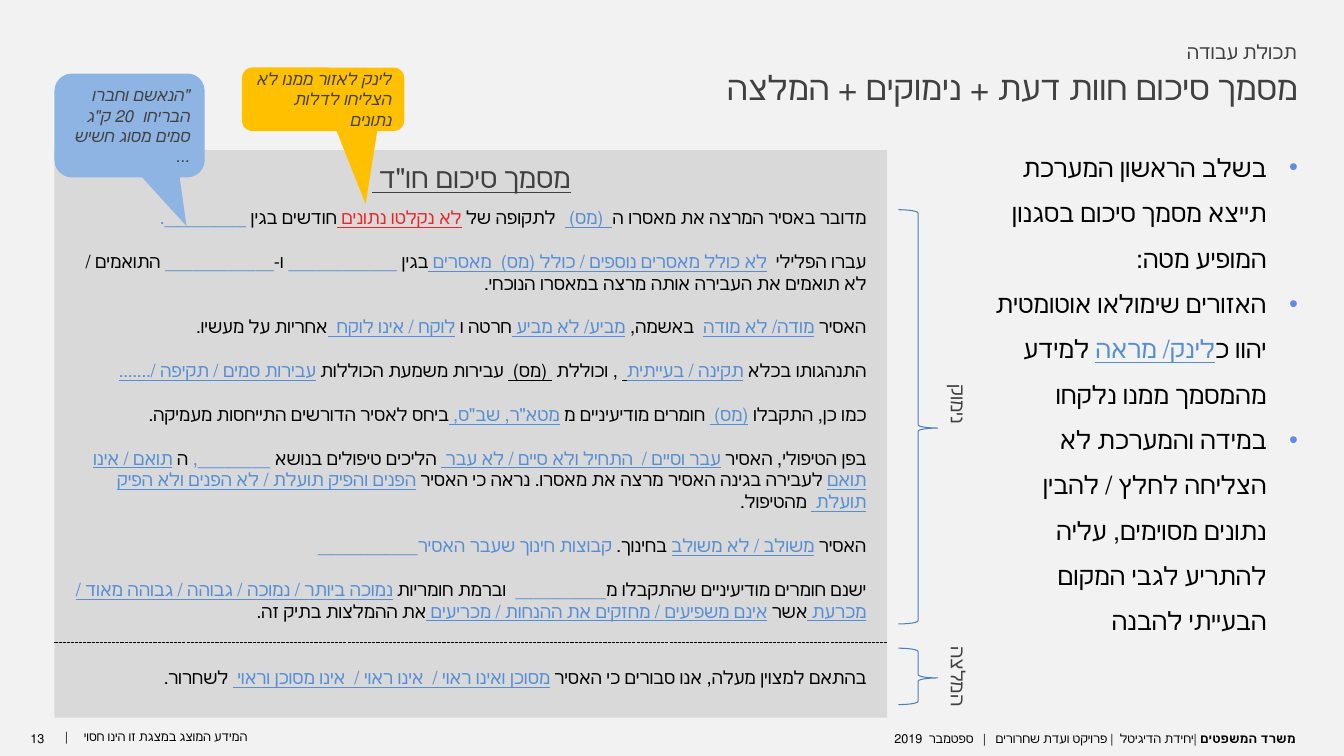
from dataclasses import dataclass
from typing import NamedTuple, Optional

import lxml.etree
import pptx
import pptx.dml.color
import pptx.enum.dml
import pptx.enum.shapes
import pptx.enum.text
import pptx.oxml.ns
import pptx.util

Inches = pptx.util.Inches
Pt = pptx.util.Pt
RGBColor = pptx.dml.color.RGBColor
Shape = pptx.enum.shapes.MSO_SHAPE
Align = pptx.enum.text.PP_ALIGN
qn = pptx.oxml.ns.qn

BACKGROUND = RGBColor(0xF2, 0xF2, 0xF2)
PANEL = RGBColor(0xD9, 0xD9, 0xD9)
BLACK = RGBColor(0, 0, 0)
GRAY = RGBColor(0x40, 0x40, 0x40)
BLUE = RGBColor(0x55, 0x8E, 0xD5)
RED = RGBColor(0xED, 0x24, 0x28)
BULLET = RGBColor(0x5D, 0x8B, 0xE6)
BRACE = RGBColor(0x4B, 0x7E, 0xBC)
PALE_BLUE = RGBColor(0x8E, 0xB4, 0xE3)
AMBER = RGBColor(0xFF, 0xC0, 0x00)


class Area(NamedTuple):
    left: float
    top: float
    width: float
    height: float


class Span(NamedTuple):
    text: str
    color: Optional[RGBColor] = None
    underline: bool = False
    bold: bool = False


@dataclass
class Style:
    font: str
    size: float
    color: RGBColor = GRAY
    align: Align = Align.RIGHT
    italic: bool = False
    bulleted: bool = False
    line_spacing: Optional[float] = None
    gap: float = 0


@dataclass
class Label:
    area: Area
    paragraphs: list[list[Span]]
    style: Style
    rotation: float = 0
    margins: tuple[float, float] = (0.1, 0.05)


@dataclass
class Callout:
    area: Area
    text: str
    fill: RGBColor
    tail: tuple[float, float]


def link(text: str) -> Span:
    return Span(text, BLUE, True)


def blank(text: str) -> Span:
    return Span(text, BLUE)


def inches(area: Area) -> list[int]:
    return [Inches(length) for length in area]


def add_bullet(para) -> None:
    properties = para._p.get_or_add_pPr()
    properties.set("marR", str(Inches(0.31)))
    properties.set("marL", str(Inches(0.31)))
    properties.set("indent", str(Inches(-0.31)))
    color = lxml.etree.SubElement(properties, qn("a:buClr"))
    lxml.etree.SubElement(color, qn("a:srgbClr"), val=str(BULLET))
    lxml.etree.SubElement(properties, qn("a:buFont"), typeface="Arial")
    lxml.etree.SubElement(properties, qn("a:buChar"), char="•")


def write(frame, paragraphs: list[list[Span]], style: Style) -> None:
    frame.word_wrap = True
    for index, spans in enumerate(paragraphs):
        para = frame.add_paragraph() if index else frame.paragraphs[0]
        para.alignment = style.align
        para._p.get_or_add_pPr().set("rtl", "1")
        if style.line_spacing:
            para.line_spacing = style.line_spacing
        if index and style.gap:
            para.space_before = Pt(style.gap)
        if style.bulleted:
            add_bullet(para)
        para.font.name = style.font
        para.font.size = Pt(style.size)
        para.font.italic = style.italic
        para.font.color.rgb = style.color
        for span in spans:
            run = para.add_run()
            run.text = span.text
            if span.color is not None:
                run.font.color.rgb = span.color
            if span.underline:
                run.font.underline = True
            if span.bold:
                run.font.bold = True


def add_label(page, label: Label) -> None:
    box = page.shapes.add_textbox(*inches(label.area))
    box.rotation = label.rotation
    frame = box.text_frame
    frame.margin_left = frame.margin_right = Inches(label.margins[0])
    frame.margin_top = frame.margin_bottom = Inches(label.margins[1])
    write(frame, label.paragraphs, label.style)


def add_filled(page, kind: Shape, area: Area, fill: RGBColor):
    shape = page.shapes.add_shape(kind, *inches(area))
    shape.shadow.inherit = False
    shape.fill.solid()
    shape.fill.fore_color.rgb = fill
    shape.line.fill.background()
    return shape


def add_callout(page, callout: Callout) -> None:
    shape = add_filled(page, Shape.ROUNDED_RECTANGULAR_CALLOUT, callout.area, callout.fill)
    shape.adjustments[0], shape.adjustments[1] = callout.tail
    shape.text_frame.vertical_anchor = pptx.enum.text.MSO_ANCHOR.MIDDLE
    write(shape.text_frame, [[Span(callout.text)]], Style("Roboto", 12, italic=True))


def add_brace(page, area: Area) -> None:
    brace = page.shapes.add_shape(Shape.LEFT_BRACE, *inches(area))
    brace.shadow.inherit = False
    brace.rotation = 180
    brace.adjustments[0], brace.adjustments[1] = 0.083, 0.473
    brace.fill.background()
    brace.line.color.rgb = BRACE
    brace.line.width = Pt(0.75)


def add_divider(page, left: float, right: float, top: float) -> None:
    divider = page.shapes.add_connector(
        pptx.enum.shapes.MSO_CONNECTOR.STRAIGHT, Inches(left), Inches(top), Inches(right), Inches(top))
    divider.line.color.rgb = BLACK
    divider.line.width = Pt(0.75)
    divider.line.dash_style = pptx.enum.dml.MSO_LINE.SQUARE_DOT
    lxml.etree.SubElement(divider._element.spPr, qn("a:effectLst"))


SUMMARY = [
    [Span("מדובר באסיר המרצה את מאסרו ה"), link("  (מס) "), Span("  לתקופה של "),
     Span("לא נקלטו נתונים ", RED, True), Span("חודשים בגין "), blank("_________.   ")],
    [Span("עברו הפלילי  "), link("לא כולל מאסרים נוספים / כולל (מס)  מאסרים "), Span("בגין "),
     blank("____________"), Span(" ו-"), blank("____________"),
     Span(" התואמים / לא תואמים את העבירה אותה מרצה במאסרו הנוכחי.")],
    [Span("האסיר "), link("מודה/ לא מודה"), Span("  באשמה, "), link("מביע/ לא מביע "),
     Span("חרטה ו "), link("לוקח / אינו לוקח  "), Span("אחריות על מעשיו.")],
    [Span("התנהגותו בכלא "), link("תקינה / בעייתית"), Span(" ", BLACK, True), Span(" , וכוללת "),
     Span(" (מס) ", BLACK, True), Span(" עבירות משמעת הכוללות "),
     link("עבירות סמים / תקיפה /.......")],
    [Span("כמו כן, התקבלו "), link("(מס) "), Span(" חומרים מודיעיניים מ "),
     link("מטא\"ר, שב\"ס, "), Span("ביחס לאסיר הדורשים התייחסות מעמיקה.")],
    [Span("בפן הטיפולי, האסיר "), link("עבר וסיים /  התחיל ולא סיים / לא עבר "),
     Span(" הליכים טיפולים בנושא "), blank("________,"), Span(" ה "), link("תואם / אינו תואם"),
     Span(" לעבירה בגינה האסיר מרצה את מאסרו. נראה כי האסיר "),
     link("הפנים והפיק תועלת / לא הפנים ולא הפיק תועלת "), Span(" מהטיפול.")],
    [Span("האסיר "), link("משולב / לא משולב"), Span(" בחינוך. "),
     blank("קבוצות חינוך שעבר האסיר___________")],
    [Span("ישנם חומרים מודיעיניים שהתקבלו מ"), blank("__________"), Span("  וברמת חומריות "),
     link("נמוכה ביותר / נמוכה / גבוהה / גבוהה מאוד / מכרעת "), Span("אשר "),
     link("אינם משפיעים / מחזקים את ההנחות / מכריעים "), Span("את ההמלצות בתיק זה.")],
]
VERDICT = [[Span("בהתאם למצוין מעלה, אנו סבורים כי האסיר "),
            link("מסוכן ואינו ראוי /  אינו ראוי /  אינו מסוכן וראוי "), Span(" לשחרור. ")]]
NOTES = [
    [Span("בשלב הראשון המערכת תייצא מסמך סיכום בסגנון המופיע מטה:")],
    [Span("האזורים שימולאו אוטומטית יהוו כ"), link("לינק/ מראה"), Span(" למידע מהמסמך ממנו נלקחו")],
    [Span("במידה והמערכת לא הצליחה לחלץ / להבין נתונים מסוימים, עליה להתריע לגבי המקום הבעייתי להבנה")],
]
FOOTER = Style("Calibri", 9, BLACK)
FORM = Style("Arial", 13, BLACK, gap=15.6)
SIDE = Style("Roboto", 14, align=Align.CENTER)
WIDE = (0.15, 0.07)
LABELS = [
    Label(Area(0.03, 7.18, 0.65, 0.31), [[Span("13 ")]],
          Style("Calibri", 9, BLACK, Align.CENTER), margins=WIDE),
    Label(Area(0.21, 7.18, 2.34, 0.31), [[Span("המידע המוצג במצגת זו הינו חסוי     |")]], FOOTER),
    Label(Area(3.78, 7.18, 9.22, 0.3),
          [[Span("משרד המשפטים ", bold=True),
            Span("|יחידת הדיגיטל  | פרויקט ועדת שחרורים   |   ספטמבר  2019")]], FOOTER, margins=WIDE),
    Label(Area(0.54, 2, 8.15, 4.3), SUMMARY, FORM),
    Label(Area(0.54, 6.56, 8.15, 0.35), VERDICT, FORM),
    Label(Area(2.07, 1.54, 5.21, 0.44), [[Span("מסמך סיכום חו\"ד ", underline=True)]],
          Style("Roboto", 20, align=Align.CENTER)),
    Label(Area(9.4, 1.31, 3.57, 4.19), NOTES,
          Style("Calibri", 18, BLACK, bulleted=True, line_spacing=1.5)),
    Label(Area(4.13, 0.61, 8.84, 0.5), [[Span("מסמך סיכום חוות דעת + נימוקים + המלצה")]], Style("Roboto", 24)),
    Label(Area(9.52, 0.35, 3.44, 0.34), [[Span("תכולת עבודה")]], Style("Roboto", 14)),
    Label(Area(8.64, 3.84, 1.73, 0.34), [[Span("נימוק")]], SIDE, 90),
    Label(Area(8.64, 6.54, 1.73, 0.34), [[Span("המלצה")]], SIDE, 90),
]
CALLOUTS = [
    Callout(Area(0.54, 0.73, 1.49, 1.03), "\"הנאשם וחברו הבריחו  20 ק\"ג סמים מסוג חשיש ...",
            PALE_BLUE, (0.379, 0.97)),
    Callout(Area(2.4, 0.67, 1.61, 0.63), "לינק לאזור ממנו לא הצליחו לדלות נתונים", AMBER, (0.262, 1.653)),
]
BRACES = [Area(8.91, 2.08, 0.39, 4.11), Area(8.91, 6.43, 0.39, 0.56)]


def main() -> None:
    deck = pptx.Presentation()
    deck.slide_width, deck.slide_height = Inches(13.33), Inches(7.5)
    page = deck.slides.add_slide(deck.slide_layouts[6])
    page.background.fill.solid()
    page.background.fill.fore_color.rgb = BACKGROUND
    add_filled(page, Shape.RECTANGLE, Area(0.54, 1.49, 8.26, 5.63), PANEL)
    for label in LABELS:
        add_label(page, label)
    for callout in CALLOUTS:
        add_callout(page, callout)
    add_divider(page, 0.54, 8.8, 6.37)
    for brace in BRACES:
        add_brace(page, brace)
    deck.save("out.pptx")


if __name__ == "__main__":
    main()
